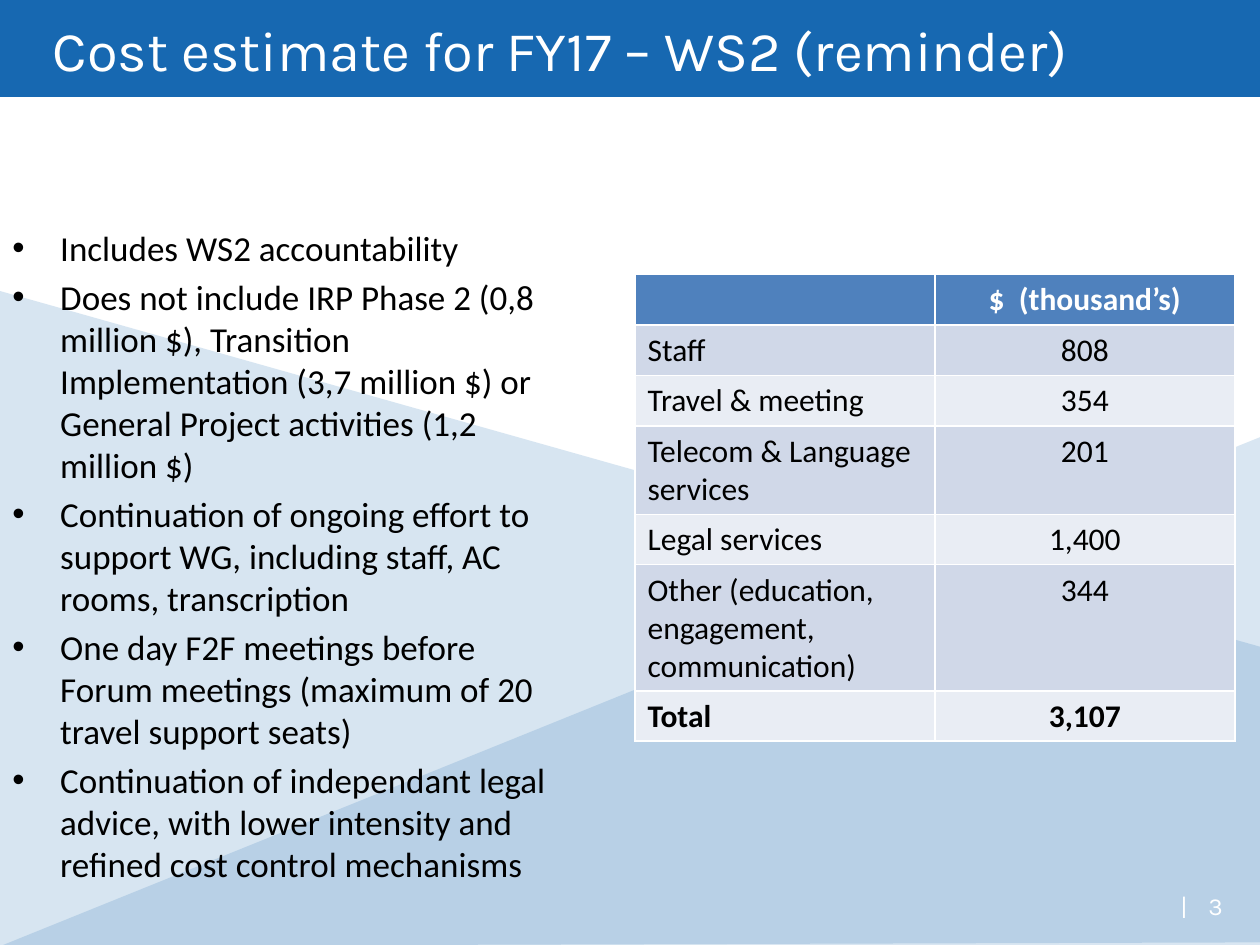
"""Builds the WS2 cost estimate slide for FY17."""
from lxml.etree import SubElement
from pptx import Presentation
from pptx.dml.color import RGBColor
from pptx.enum.shapes import MSO_SHAPE
from pptx.enum.text import MSO_ANCHOR, PP_ALIGN
from pptx.oxml.ns import qn
from pptx.util import Inches, Pt

BLUE = RGBColor(0x17, 0x68, 0xB1)
WHITE = RGBColor(0xFF, 0xFF, 0xFF)
BLACK = RGBColor(0, 0, 0)
HEADER = RGBColor(0x4F, 0x81, 0xBD)
BANDS = RGBColor(0xD0, 0xD8, 0xE8), RGBColor(0xE9, 0xED, 0xF4)

TITLE = "Cost estimate for FY17 – WS2 (reminder)"
PAGE_NUMBER = "|\t3"
POINTS = [
    "Includes WS2 accountability",
    "Does not include IRP Phase 2 (0,8 million $), Transition Implementation "
    "(3,7 million $) or General Project activities (1,2 million $)",
    "Continuation of ongoing effort to support WG, including staff, AC rooms, transcription",
    "One day F2F meetings before Forum meetings (maximum of 20 travel support seats)",
    "Continuation of independant legal advice, with lower intensity and "
    "refined cost control mechanisms",
]
COSTS = [
    ("", "$  (thousand’s)", 1),
    ("Staff", "808", 1),
    ("Travel & meeting", "354", 1),
    ("Telecom & Language services", "201", 2),
    ("Legal services", "1,400", 1),
    ("Other (education, engagement, communication)", "344", 3),
    ("Total", "3,107", 1),
]
BACKDROPS = [
    ([(0, 2.31), (10.06, 5.15), (10.06, 7.48), (0, 7.51)], 17),
    ([(10, 3.47), (10, 7.51), (0, 7.51)], 16),
]
COLUMN_WIDTH = Inches(2.38)
LINE_HEIGHT, CELL_PADDING = 0.3, 0.1


def style(paragraph, face, size, color, bold=False):
    font = paragraph.font
    font.name, font.size, font.bold = face, Pt(size), bold
    font.color.rgb = color


def paint(shape, color):
    shape.shadow.inherit = False
    shape.fill.solid()
    shape.fill.fore_color.rgb = color
    shape.line.fill.background()


def add_backdrop(slide, corners, opacity):
    outline = [(Inches(x), Inches(y)) for x, y in corners]
    builder = slide.shapes.build_freeform(*outline[0])
    builder.add_line_segments(outline[1:], close=True)
    backdrop = builder.convert_to_shape()
    paint(backdrop, BLUE)
    color = backdrop.fill._xPr.find(qn("a:solidFill"))[0]
    SubElement(color, qn("a:alpha"), val=str(opacity * 1000))


def add_title(slide):
    banner = slide.shapes.add_shape(
        MSO_SHAPE.RECTANGLE, 0, Inches(-0.01), Inches(10), Inches(0.78))
    paint(banner, BLUE)
    frame = banner.text_frame
    frame.vertical_anchor = MSO_ANCHOR.MIDDLE
    frame.margin_left = Inches(0.42)
    heading = frame.paragraphs[0]
    heading.text = TITLE
    heading.alignment = PP_ALIGN.LEFT
    heading.line_spacing = Pt(39.8)
    style(heading, "Karla", 32, WHITE)


def add_page_number(slide):
    footer = slide.shapes.add_textbox(
        Inches(7.47), Inches(7.02), Inches(2.33), Inches(0.4)).text_frame
    footer.word_wrap = True
    footer.margin_left = Inches(1.9)
    footer.margin_right = 0
    number = footer.paragraphs[0]
    number.text = PAGE_NUMBER
    stops = SubElement(number._p.get_or_add_pPr(), qn("a:tabLst"))
    SubElement(stops, qn("a:tab"), pos=str(Inches(0.22)), algn="l")
    style(number, "Karla", 14, WHITE)


def add_points(slide):
    body = slide.shapes.add_textbox(0, Inches(1.75), Inches(4.64), Inches(4.95)).text_frame
    body.word_wrap = True
    for index, point in enumerate(POINTS):
        paragraph = body.add_paragraph() if index else body.paragraphs[0]
        paragraph.text = point
        paragraph.space_before = Pt(4 if index else 0)
        properties = paragraph._p.get_or_add_pPr()
        properties.set("marL", str(Inches(0.38)))
        properties.set("indent", str(Inches(-0.38)))
        SubElement(properties, qn("a:buFont"), typeface="Arial")
        SubElement(properties, qn("a:buChar"), char="•")
        style(paragraph, "Calibri", 20, BLACK)


def add_costs(slide):
    heights = [Inches(CELL_PADDING + LINE_HEIGHT * lines) for *_, lines in COSTS]
    costs = slide.shapes.add_table(
        len(COSTS), 2, Inches(5.04), Inches(2.18), 2 * COLUMN_WIDTH, sum(heights)).table
    last = len(COSTS) - 1
    for row, (label, amount, _) in enumerate(COSTS):
        costs.rows[row].height = heights[row]
        for column, value in enumerate((label, amount)):
            cell = costs.cell(row, column)
            cell.fill.solid()
            cell.fill.fore_color.rgb = BANDS[(row - 1) % 2] if row else HEADER
            entry = cell.text_frame.paragraphs[0]
            entry.text = value
            entry.alignment = PP_ALIGN.CENTER if column else PP_ALIGN.LEFT
            style(entry, "Calibri", 18, BLACK if row else WHITE, row in (0, last))


def main():
    deck = Presentation()
    deck.slide_width, deck.slide_height = Inches(10), Inches(7.5)
    slide = deck.slides.add_slide(deck.slide_layouts[6])
    for corners, opacity in BACKDROPS:
        add_backdrop(slide, corners, opacity)
    add_page_number(slide)
    add_title(slide)
    add_points(slide)
    add_costs(slide)
    deck.save("out.pptx")


if __name__ == "__main__":
    main()
